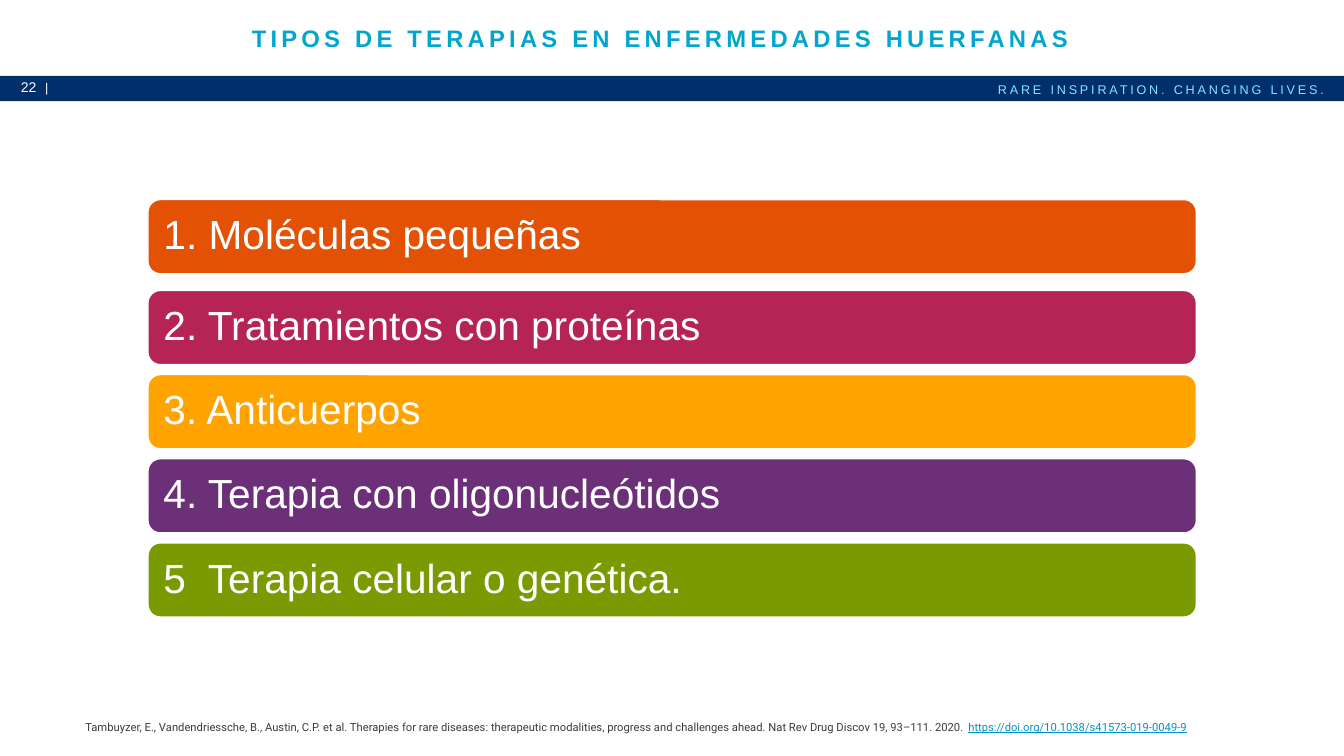
from dataclasses import dataclass

from lxml import etree
from pptx import Presentation
from pptx import util as u
from pptx.dml.color import RGBColor
from pptx.enum import shapes, text
from pptx.oxml import ns


@dataclass(frozen=True)
class Theme:
    white: str = "FFFFFF"
    navy: str = "002F6C"
    sky: str = "85E7FF"
    cyan: str = "00A6CE"
    ink: str = "393B42"
    link: str = "0092CB"
    bars: tuple = ("E35105", "B52455", "FFA300", "6B3077", "799A01")
    font: str = "Arial"
    citation_font: str = "Roboto"
    title_size: int = 17
    therapy_size: int = 29
    page_size: int = 10
    band_size: int = 9
    citation_size: int = 8


@dataclass(frozen=True)
class Box:
    left: float
    top: float
    width: float
    height: float

    def inner(self, left, top, width, height):
        return Box(self.left + left, self.top + top, width, height)

    def lengths(self):
        return [u.Cm(n) for n in (self.left, self.top, self.width, self.height)]


THEME = Theme()
THERAPIES = (
    "1. Moléculas pequeñas",
    "2. Tratamientos con proteínas",
    "3. Anticuerpos",
    "4. Terapia con oligonucleótidos",
    "5\tTerapia celular o genética.",
)


def add_run(paragraph, words, size, color, font=THEME.font, bold=False, tracking=0):
    run = paragraph.add_run()
    run.text = words
    run.font.size = u.Pt(size)
    run.font.name = font
    run.font.bold = bold
    run.font.color.rgb = RGBColor.from_string(color)
    if tracking:
        run._r.get_or_add_rPr().set("spc", str(tracking * 100))
    return run


def add_label(slide, box, anchor=text.MSO_ANCHOR.TOP, align=text.PP_ALIGN.LEFT, spacing=1.0):
    frame = slide.shapes.add_textbox(*box.lengths()).text_frame
    frame.word_wrap = True
    frame.vertical_anchor = anchor
    paragraph = frame.paragraphs[0]
    paragraph.alignment = align
    paragraph.line_spacing = spacing
    return paragraph


def add_block(slide, preset, box, color):
    block = slide.shapes.add_shape(preset, *box.lengths())
    block.shadow.inherit = False
    block.fill.solid()
    block.fill.fore_color.rgb = RGBColor.from_string(color)
    return block


def add_tab_stop(paragraph, position):
    properties = paragraph._p.get_or_add_pPr()
    tabs = etree.SubElement(properties, ns.qn("a:tabLst"))
    etree.SubElement(tabs, ns.qn("a:tab"), pos=str(int(position)), algn="l")


def place_title(slide, box):
    title = slide.shapes.title
    title.left, title.top, title.width, title.height = box.lengths()
    frame = title.text_frame
    frame.word_wrap = True
    frame.auto_size = text.MSO_AUTO_SIZE.NONE
    frame.vertical_anchor = text.MSO_ANCHOR.MIDDLE
    heading = frame.paragraphs[0]
    heading.alignment = text.PP_ALIGN.CENTER
    heading.line_spacing = 0.9
    add_run(heading, "TIPOS DE TERAPIAS EN ENFERMEDADES HUERFANAS ",
            THEME.title_size, THEME.cyan, bold=True, tracking=3)


def place_band(slide, box):
    band = add_block(slide, shapes.MSO_SHAPE.RECTANGLE, box, THEME.navy)
    band.line.fill.background()
    page = add_label(slide, box.inner(0.28, 0, 1.17, 1.09), spacing=0.9)
    add_run(page, "22", THEME.page_size, THEME.white)
    divider = add_label(slide, box.inner(0.89, 0, 0.61, box.height),
                        anchor=text.MSO_ANCHOR.MIDDLE, spacing=0.9)
    add_run(divider, "|", THEME.band_size, THEME.white)
    motto = add_label(slide, box.inner(box.width - 12.45, 0.03, 12.19, box.height),
                      align=text.PP_ALIGN.RIGHT)
    add_run(motto, "RARE INSPIRATION. CHANGING LIVES.",
            THEME.band_size, THEME.sky, tracking=2)


def place_therapies(slide, box):
    bar_height, step, first_gap = 1.87, 2.12, 0.17
    for row, (therapy, color) in enumerate(zip(THERAPIES, THEME.bars)):
        top = row * step + (first_gap if row else 0)
        bar = add_block(slide, shapes.MSO_SHAPE.ROUNDED_RECTANGLE,
                        box.inner(0, top, box.width, bar_height), color)
        bar.line.color.rgb = RGBColor.from_string(THEME.white)
        bar.line.width = u.Pt(1)
        frame = bar.text_frame
        frame.word_wrap = True
        frame.vertical_anchor = text.MSO_ANCHOR.MIDDLE
        frame.margin_left = frame.margin_right = u.Cm(0.3)
        frame.margin_top = frame.margin_bottom = u.Cm(0.3)
        label = frame.paragraphs[0]
        add_tab_stop(label, u.Cm(1.12))
        label.alignment = text.PP_ALIGN.LEFT
        label.line_spacing = 0.9
        add_run(label, therapy, THEME.therapy_size, THEME.white)


def place_citation(slide, box):
    citation = add_label(slide, box)
    add_run(citation,
            "Tambuyzer, E., Vandendriessche, B., Austin, C.P. et al. Therapies for rare "
            "diseases: therapeutic modalities, progress and challenges ahead. "
            "Nat Rev Drug Discov 19, 93–111. 2020. ",
            THEME.citation_size, THEME.ink, THEME.citation_font)
    doi = add_run(citation, "https://doi.org/10.1038/s41573-019-0049-9",
                  THEME.citation_size, THEME.link, THEME.citation_font)
    doi.font.underline = True


def main():
    deck = Presentation()
    deck.slide_width, deck.slide_height = u.Cm(33.87), u.Cm(19.05)
    slide = deck.slides.add_slide(deck.slide_layouts.get_by_name("Title Only"))
    place_band(slide, Box(0, 1.91, 33.87, 0.64))
    place_title(slide, Box(4.19, 0.05, 25.17, 1.9))
    place_therapies(slide, Box(3.73, 5.03, 26.42, 10.52))
    place_citation(slide, Box(1.9, 18.03, 29.62, 0.61))
    deck.save("out.pptx")


if __name__ == "__main__":
    main()
